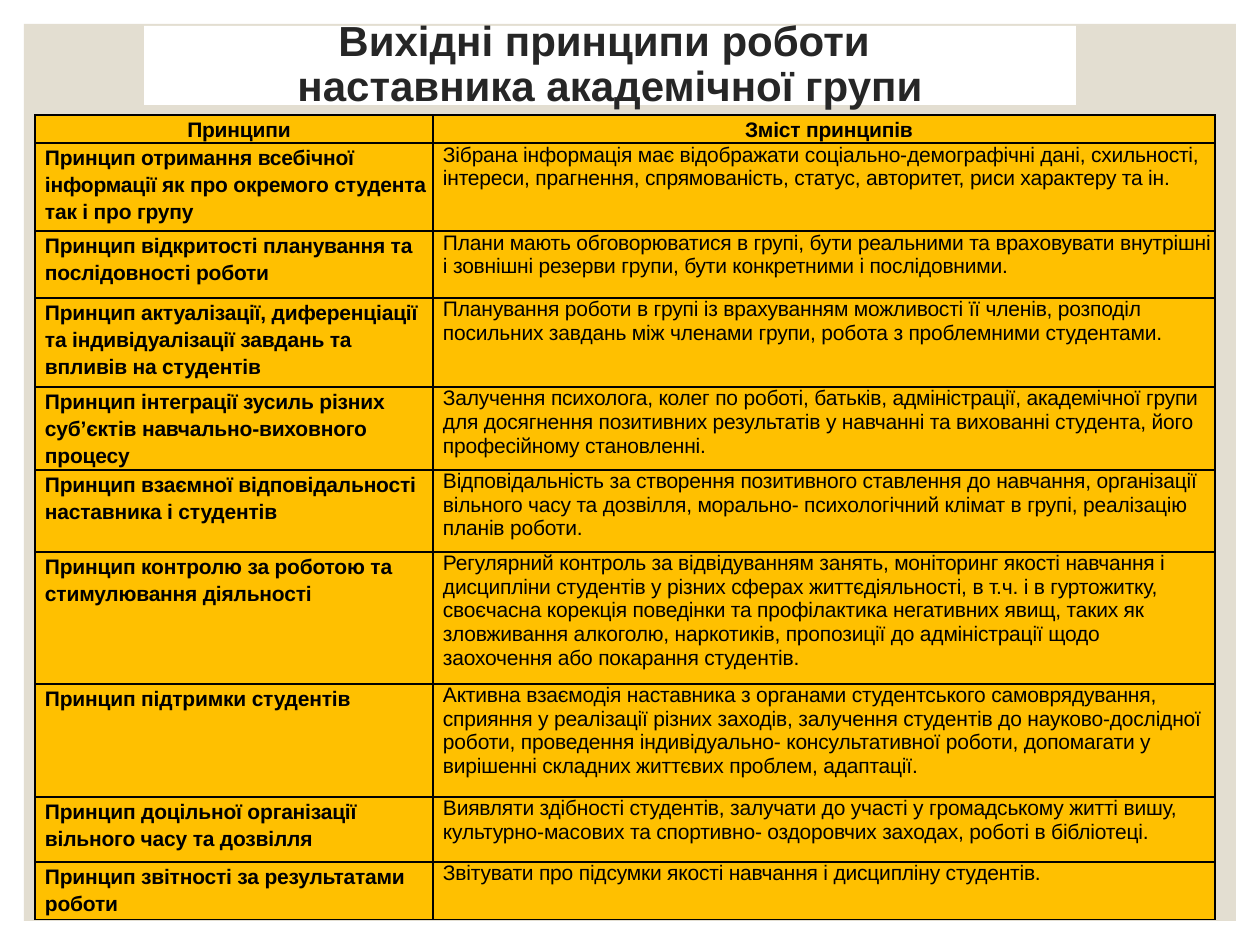
"""Build a slide with a table of the principles of an academic group mentor."""
from dataclasses import dataclass

from lxml.etree import SubElement
from pptx import Presentation
from pptx.dml.color import RGBColor
from pptx.enum.shapes import MSO_SHAPE
from pptx.enum.text import MSO_ANCHOR, MSO_AUTO_SIZE, PP_ALIGN
from pptx.oxml.ns import qn
from pptx.util import Emu, Pt


@dataclass(frozen=True)
class Theme:
    """Colours, font and type sizes of the slide."""
    font: str = "Arial"
    paper: str = "FFFFFF"
    panel: str = "E3DED1"
    gold: str = "FFC000"
    ink: str = "000000"
    head: str = "262626"
    title: int = 24
    body: int = 12


THEME = Theme()
SCALE = 914400 / 126
COLS = [398, 782]
ROWS = [28, 88, 67, 89, 83, 82, 132, 113, 65, 58]
TITLE = "Вихідні принципи роботи \vнаставника академічної групи"
HEADS = ("Принципи", "Зміст принципів")
ITEMS = [
    ("Принцип отримання всебічної інформації як про окремого студента так і про групу",
     "Зібрана інформація має відображати соціально-демографічні дані, схильності, "
     "інтереси, прагнення, спрямованість, статус, авторитет, риси характеру та ін."),
    ("Принцип відкритості планування та послідовності роботи",
     "Плани мають обговорюватися в групі, бути реальними та враховувати внутрішні "
     "і зовнішні резерви групи, бути конкретними і послідовними."),
    ("Принцип актуалізації, диференціації та індивідуалізації завдань та впливів на студентів",
     "Планування роботи в групі із врахуванням можливості її членів, розподіл "
     "посильних завдань між членами групи, робота з проблемними студентами."),
    ("Принцип інтеграції зусиль різних суб’єктів навчально-виховного процесу",
     "Залучення психолога, колег по роботі, батьків, адміністрації, академічної групи "
     "для досягнення позитивних результатів у навчанні та вихованні студента, "
     "його професійному становленні."),
    ("Принцип взаємної відповідальності наставника і студентів",
     "Відповідальність за створення позитивного ставлення до навчання, організації\n"
     "вільного часу та дозвілля, морально- психологічний клімат в групі, "
     "реалізацію планів роботи."),
    ("Принцип контролю за роботою та стимулювання діяльності",
     "Регулярний контроль за відвідуванням занять, моніторинг якості навчання "
     "і дисципліни студентів у різних сферах життєдіяльності, в т.ч. і в гуртожитку, "
     "своєчасна корекція поведінки та профілактика негативних явищ, таких як "
     "зловживання алкоголю, наркотиків, пропозиції до адміністрації щодо "
     "заохочення або покарання студентів."),
    ("Принцип підтримки студентів",
     "Активна взаємодія наставника з органами студентського самоврядування, "
     "сприяння у реалізації різних заходів, залучення студентів до науково-дослідної "
     "роботи, проведення індивідуально- консультативної роботи, "
     "допомагати у вирішенні складних життєвих проблем, адаптації."),
    ("Принцип доцільної організації вільного часу та дозвілля",
     "Виявляти здібності студентів, залучати до участі у громадському житті вишу, "
     "культурно-масових та спортивно- оздоровчих заходах, роботі в бібліотеці."),
    ("Принцип звітності за результатами роботи",
     "Звітувати про підсумки якості навчання і дисципліну студентів."),
]


def px(count):
    """Turn pixels into EMU."""
    return Emu(round(count * SCALE))


def paint(fill, color):
    """Give a fill one solid colour."""
    fill.solid()
    fill.fore_color.rgb = RGBColor.from_string(color)


def write(frame, text, size=THEME.body, color=THEME.ink, bold=False,
          align=PP_ALIGN.LEFT, lines=1.0, space=0):
    """Put formatted text into a frame."""
    frame.text = text
    for para in frame.paragraphs:
        para.alignment = align
        para.line_spacing = lines
        para.space_before = para.space_after = Pt(0)
        for run in para.runs:
            font = run.font
            font.name, font.size, font.bold = THEME.font, Pt(size), bold
            font.color.rgb = RGBColor.from_string(color)
            if space:
                font._element.set("spc", str(space))


def add_panel(slide, box):
    """Draw the panel behind everything else."""
    panel = slide.shapes.add_shape(MSO_SHAPE.RECTANGLE, *map(px, box))
    panel.shadow.inherit = False
    paint(panel.fill, THEME.panel)
    panel.line.fill.background()
    slide.shapes.element.insert(2, panel.element)


def set_title(slide, box):
    """Place and format the title."""
    title = slide.shapes.title
    title.left, title.top, title.width, title.height = map(px, box)
    paint(title.fill, THEME.paper)
    frame = title.text_frame
    frame.word_wrap, frame.auto_size = True, MSO_AUTO_SIZE.NONE
    frame.vertical_anchor = MSO_ANCHOR.MIDDLE
    write(frame, TITLE, size=THEME.title, color=THEME.head, bold=True,
          align=PP_ALIGN.CENTER, lines=0.9)


def edge(cell):
    """Draw thin lines on all four sides of a cell."""
    props = cell._tc.get_or_add_tcPr()
    for side in ("a:lnL", "a:lnR", "a:lnT", "a:lnB"):
        line = SubElement(props, qn(side), w=str(Pt(1)))
        fill = SubElement(line, qn("a:solidFill"))
        SubElement(fill, qn("a:srgbClr"), val=THEME.ink)


def set_cell(cell, text, **form):
    """Fill, outline and write one cell."""
    edge(cell)
    paint(cell.fill, THEME.gold)
    cell.margin_left = px(10)
    cell.margin_right = cell.margin_top = cell.margin_bottom = 0
    write(cell.text_frame, text, space=-10, **form)


def add_grid(slide, left, top):
    """Add the table of principles."""
    rows = [HEADS, *ITEMS]
    box = (left, top, sum(COLS), sum(ROWS))
    grid = slide.shapes.add_table(len(rows), len(COLS), *map(px, box)).table
    grid.first_row = grid.horz_banding = False
    for col, width in zip(grid.columns, COLS):
        col.width = px(width)
    for row, height in zip(grid.rows, ROWS):
        row.height = px(height)
    for i, texts in enumerate(rows):
        for j, text in enumerate(texts):
            label = i == 0 or j == 0
            set_cell(grid.cell(i, j), text, bold=label,
                     align=PP_ALIGN.LEFT if i else PP_ALIGN.CENTER,
                     lines=1.15 if label else 1.0)


def main():
    """Build and save the slide."""
    deck = Presentation()
    deck.slide_width, deck.slide_height = px(1260), px(945)
    slide = deck.slides.add_slide(deck.slide_layouts[5])
    paint(slide.background.fill, THEME.paper)
    add_panel(slide, (24, 24, 1212, 897))
    set_title(slide, (144, 26, 932, 79))
    add_grid(slide, 35, 115)
    deck.save("out.pptx")


if __name__ == "__main__":
    main()
